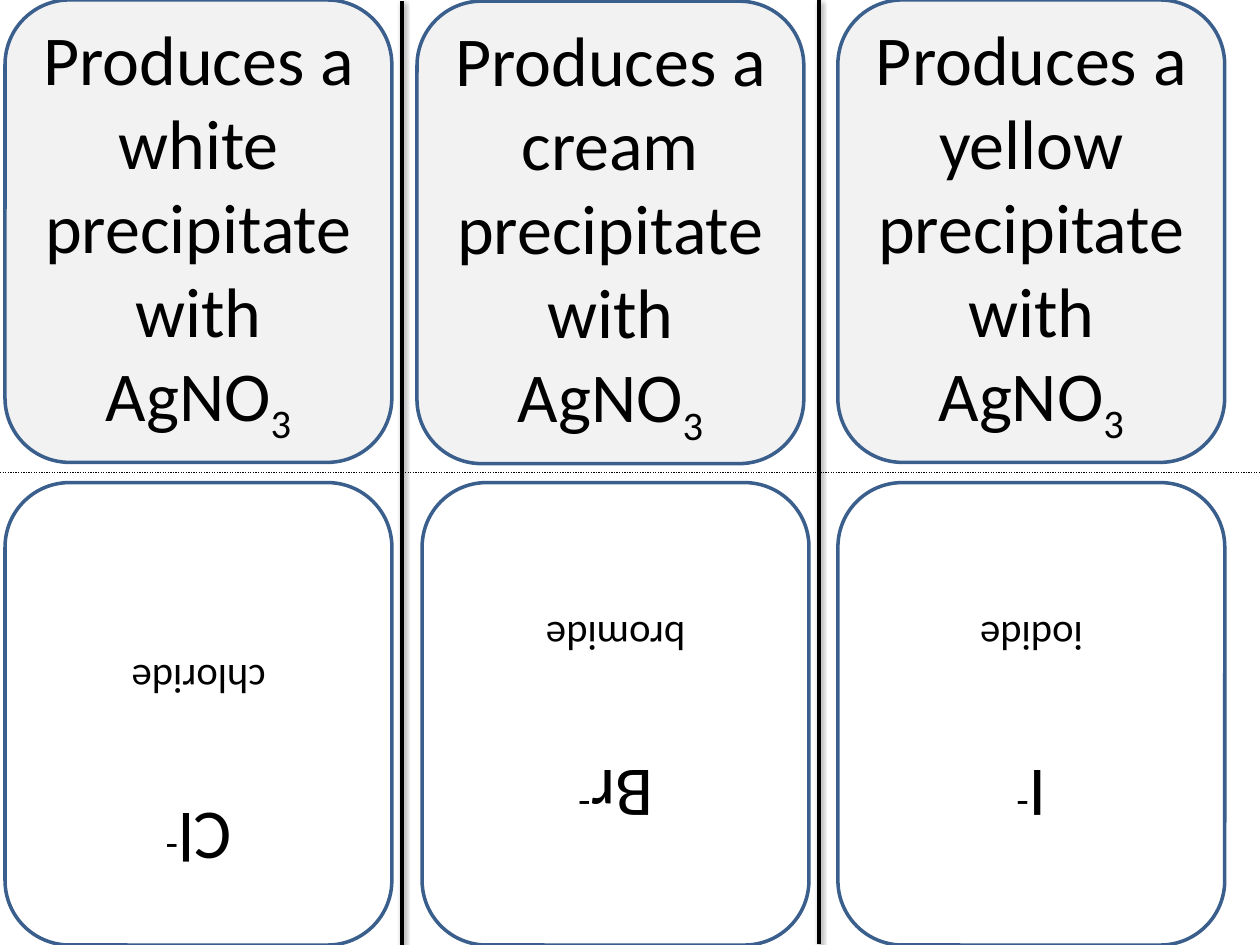
from lxml import etree
from pptx import Presentation
from pptx.dml.color import RGBColor
from pptx.enum.dml import MSO_LINE
from pptx.enum.shapes import MSO_CONNECTOR, MSO_SHAPE
from pptx.enum.text import MSO_ANCHOR, PP_ALIGN
from pptx.oxml import parse_xml
from pptx.oxml.ns import nsdecls, qn
from pptx.util import Inches, Pt

ROUNDED = MSO_SHAPE.ROUNDED_RECTANGLE
STRAIGHT = MSO_CONNECTOR.STRAIGHT
DOTTED = MSO_LINE.ROUND_DOT
CENTER = PP_ALIGN.CENTER
MIDDLE = MSO_ANCHOR.MIDDLE

BLACK = RGBColor(0x00, 0x00, 0x00)
WHITE = RGBColor(0xFF, 0xFF, 0xFF)
GREY = RGBColor(0xF2, 0xF2, 0xF2)
BLUE = RGBColor(0x3A, 0x5F, 0x8C)

SUBSCRIPT = -25000
SUPERSCRIPT = 30000
CARD_WIDTH, CARD_HEIGHT = 3.07, 3.67
ANSWER_TOP = 3.83
LINE_GAP = Pt(48.8)
SHADOW = (
    f'<a:effectLst {nsdecls("a")}><a:outerShdw blurRad="40000" dist="20000" dir="5400000" rotWithShape="0">'
    '<a:srgbClr val="000000"><a:alpha val="38000"/></a:srgbClr></a:outerShdw></a:effectLst>'
)

CARDS = [
    (0.04, 0, 0.04, "white", "Cl", "chloride", 0.73),
    (3.31, 0.01, 3.35, "cream", "Br", "bromide", 0.05),
    (6.65, 0, 6.65, "yellow", "I", "iodide", 0.05),
]


class CardSheet:
    """Draws folding question and answer cards on one slide."""

    def __init__(self, slide, font="Calibri", size=40):
        self.slide = slide
        self.font = font
        self.size = size

    def card(self, left, top, fill):
        shape = self.slide.shapes.add_shape(
            ROUNDED, Inches(left), Inches(top), Inches(CARD_WIDTH), Inches(CARD_HEIGHT)
        )
        shape.shadow.inherit = False
        shape.fill.solid()
        shape.fill.fore_color.rgb = fill
        shape.line.color.rgb = BLUE
        shape.line.width = Pt(2)
        shape.text_frame.word_wrap = True
        shape.text_frame.vertical_anchor = MIDDLE
        return shape

    def add_text(self, paragraph, text, baseline=0):
        run = paragraph.add_run()
        run.text = text
        run.font.name = self.font
        run.font.size = Pt(self.size)
        run.font.color.rgb = BLACK
        if baseline:
            run.font._element.set("baseline", str(baseline))
        paragraph.alignment = CENTER

    def question(self, left, top, colour):
        paragraph = self.card(left, top, GREY).text_frame.paragraphs[0]
        self.add_text(paragraph, f"Produces a {colour} precipitate with AgNO")
        self.add_text(paragraph, "3", SUBSCRIPT)

    def answer(self, left, symbol, name, bottom_margin):
        shape = self.card(left, ANSWER_TOP, WHITE)
        shape.rotation = 180
        text_frame = shape.text_frame
        text_frame.margin_bottom = Inches(bottom_margin)
        formula = text_frame.paragraphs[0]
        self.add_text(formula, symbol)
        self.add_text(formula, "-", SUPERSCRIPT)
        formula.space_after = LINE_GAP
        self.add_text(text_frame.add_paragraph(), name, SUPERSCRIPT)

    def line(self, start, end, width, dash=None, shadow=False):
        connector = self.slide.shapes.add_connector(
            STRAIGHT, *(Inches(value) for value in start + end)
        )
        connector.line.color.rgb = BLACK
        connector.line.width = Pt(width)
        if dash is not None:
            connector.line.dash_style = dash
        properties = connector._element.spPr
        if shadow:
            properties.append(parse_xml(SHADOW))
        else:
            etree.SubElement(properties, qn("a:effectLst"))


def main():
    presentation = Presentation()
    presentation.slide_width = Inches(10)
    presentation.slide_height = Inches(7.5)
    slide = presentation.slides.add_slide(presentation.slide_layouts[6])
    sheet = CardSheet(slide)
    for left, top, answer_left, colour, symbol, name, margin in CARDS:
        sheet.question(left, top, colour)
        sheet.answer(answer_left, symbol, name, margin)
    sheet.line((0, 3.75), (10, 3.75), 0.75, dash=DOTTED)
    sheet.line((3.19, 0.01), (3.19, 7.5), 2, shadow=True)
    sheet.line((6.5, 0), (6.5, 7.49), 2, shadow=True)
    presentation.save("out.pptx")


if __name__ == "__main__":
    main()
